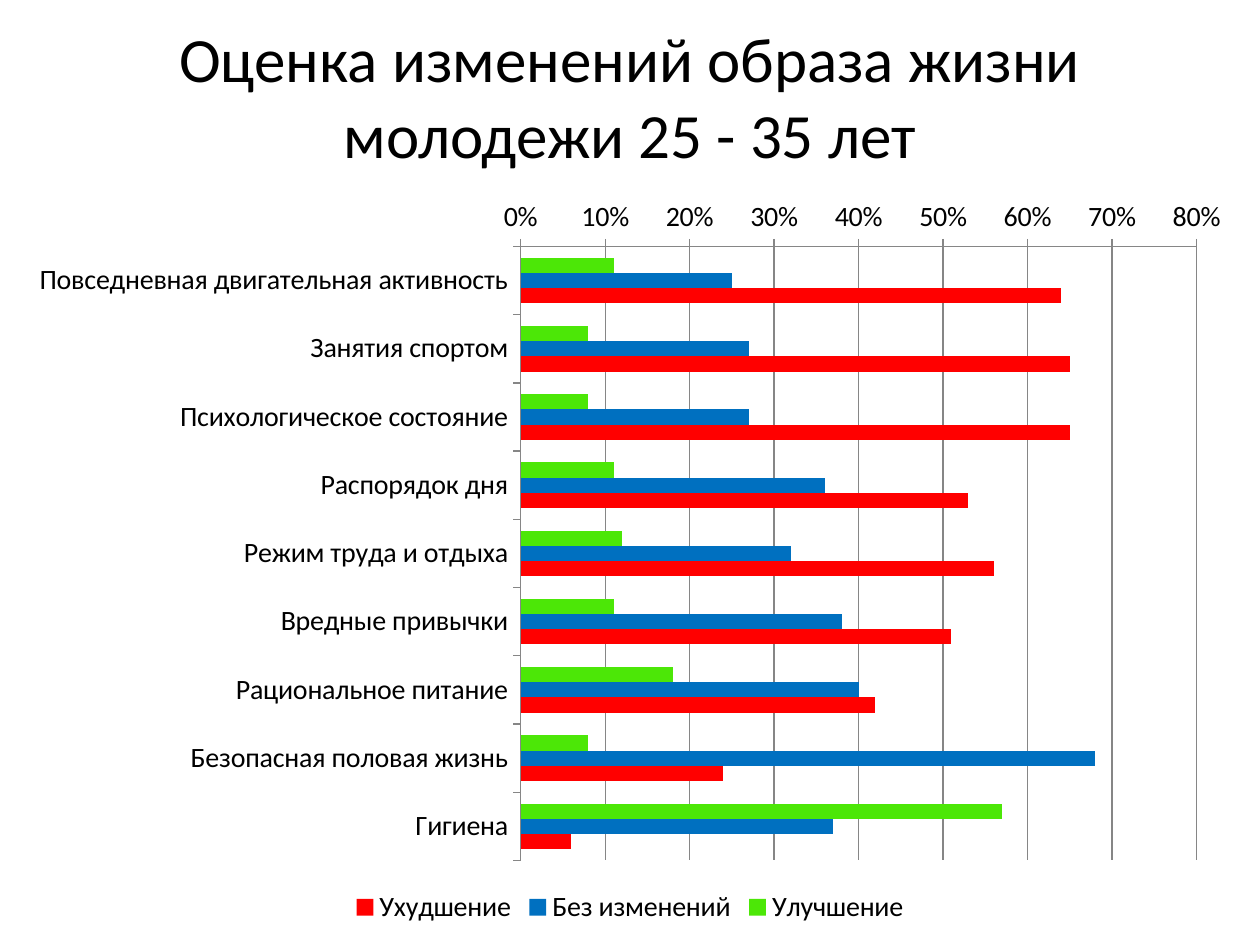
import pptx
import pptx.chart.data
import pptx.dml.color
import pptx.enum.chart
import pptx.enum.text
import pptx.util

SCALE = 914400 // 126  # EMU per px


class Theme:
    font = "Calibri"
    title_size = 36
    chart_size = 16
    text = "000000"
    grid = "868686"
    better = "4CE707"
    same = "0070C0"
    worse = "FF0000"


def px(length):
    return pptx.util.Emu(length * SCALE)


def add_text(slide, text, *, left, top, width, height, size, color, align, anchor):
    box = slide.shapes.add_textbox(px(left), px(top), px(width), px(height))
    frame = box.text_frame
    frame.word_wrap = True
    frame.vertical_anchor = anchor
    paragraph = frame.paragraphs[0]
    paragraph.text = text
    paragraph.alignment = align
    for run in paragraph.runs:
        run.font.name = Theme.font
        run.font.size = pptx.util.Pt(size)
        run.font.color.rgb = pptx.dml.color.RGBColor.from_string(color)


presentation = pptx.Presentation()
presentation.slide_width = px(1260)
presentation.slide_height = px(945)
slide = presentation.slides.add_slide(presentation.slide_layouts[6])

# Survey results
categories = [
    "Повседневная двигательная активность",
    "Занятия спортом",
    "Психологическое состояние",
    "Распорядок дня",
    "Режим труда и отдыха",
    "Вредные привычки",
    "Рациональное питание",
    "Безопасная половая жизнь",
    "Гигиена",
]
answers = [
    ("Улучшение", Theme.better, [11, 8, 8, 11, 12, 11, 18, 8, 57]),
    ("Без изменений", Theme.same, [25, 27, 27, 36, 32, 38, 40, 68, 37]),
    ("Ухудшение", Theme.worse, [64, 65, 65, 53, 56, 51, 42, 24, 6]),
]
chart_data = pptx.chart.data.CategoryChartData(number_format="0%")
chart_data.categories = categories
for name, _, percents in answers:
    chart_data.add_series(name, [percent / 100 for percent in percents])

chart = slide.shapes.add_chart(
    pptx.enum.chart.XL_CHART_TYPE.BAR_CLUSTERED,
    px(15), px(185), px(1230), px(745), chart_data,
).chart
chart.has_title = False
chart.font.name = Theme.font
chart.font.size = pptx.util.Pt(Theme.chart_size)
chart.font.color.rgb = pptx.dml.color.RGBColor.from_string(Theme.text)

chart.has_legend = True
chart.legend.position = pptx.enum.chart.XL_LEGEND_POSITION.BOTTOM
chart.legend.include_in_layout = False

plot = chart.plots[0]
plot.gap_width = 150
plot.overlap = 0
plot.vary_by_categories = False
for series, (_, color, _) in zip(plot.series, answers):
    series.invert_if_negative = False
    series.format.fill.solid()
    series.format.fill.fore_color.rgb = pptx.dml.color.RGBColor.from_string(color)

# The first category stands on top, which also moves the percentages there
chart.category_axis.reverse_order = True
value_axis = chart.value_axis
value_axis.minimum_scale = 0
value_axis.maximum_scale = 0.8
value_axis.major_unit = 0.1
value_axis.has_major_gridlines = True
value_axis.tick_labels.number_format = "0%"
value_axis.tick_labels.number_format_is_linked = False
for axis in (chart.category_axis, value_axis):
    axis.major_tick_mark = pptx.enum.chart.XL_TICK_MARK.OUTSIDE
for part in (chart.category_axis, value_axis, value_axis.major_gridlines):
    part.format.line.width = pptx.util.Pt(0.75)
    part.format.line.color.rgb = pptx.dml.color.RGBColor.from_string(Theme.grid)

add_text(
    slide, "Оценка изменений образа жизни\vмолодежи 25 - 35 лет",
    left=63, top=16, width=1134, height=158,
    size=Theme.title_size, color=Theme.text,
    align=pptx.enum.text.PP_ALIGN.CENTER,
    anchor=pptx.enum.text.MSO_ANCHOR.MIDDLE,
)

presentation.save("out.pptx")
